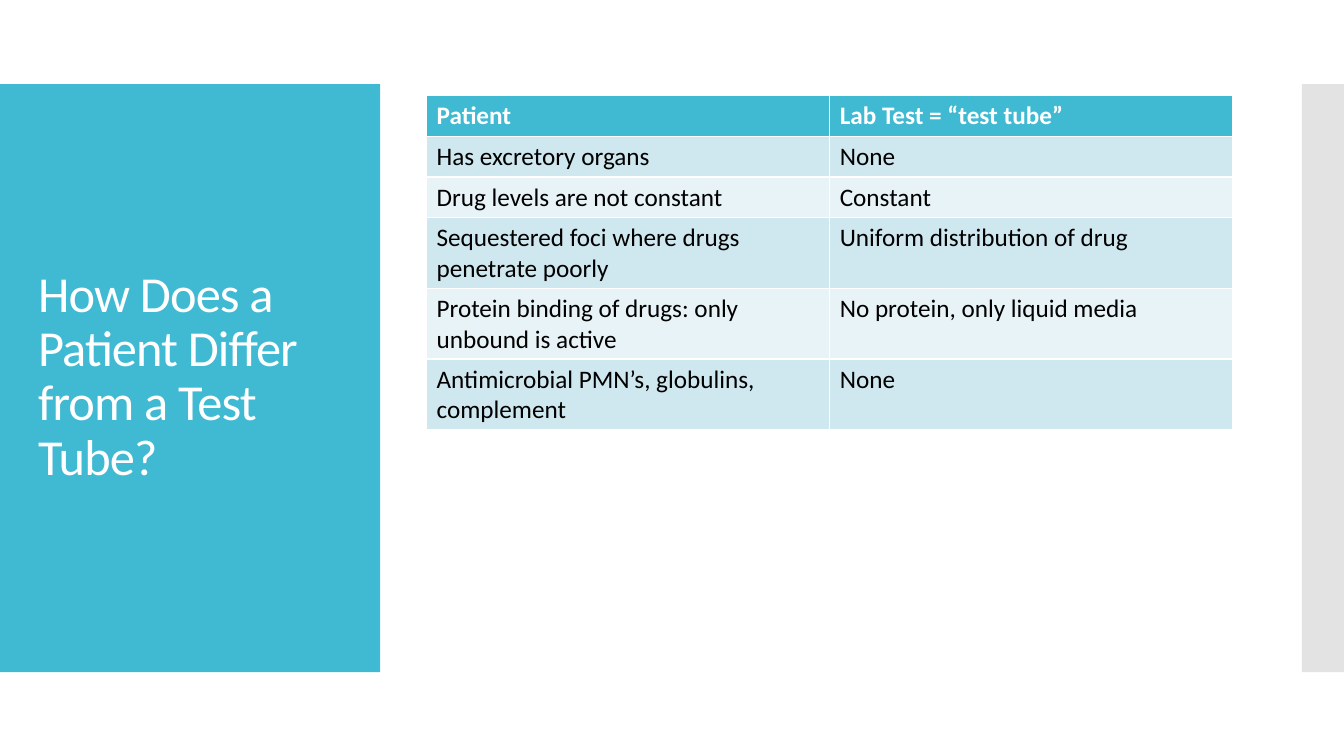
from lxml import etree
from pptx import Presentation
from pptx.dml.color import RGBColor
from pptx.enum.shapes import MSO_SHAPE
from pptx.enum.text import MSO_ANCHOR
from pptx.oxml.ns import qn
from pptx.util import Cm, Pt

RECTANGLE = MSO_SHAPE.RECTANGLE
MIDDLE = MSO_ANCHOR.MIDDLE

TITLE = "How Does a Patient Differ from a Test Tube?"
COMPARISON = [
    ("Patient", "Lab Test = “test tube”"),
    ("Has excretory organs", "None"),
    ("Drug levels are not constant", "Constant"),
    ("Sequestered foci where drugs penetrate poorly", "Uniform distribution of drug"),
    ("Protein binding of drugs: only unbound is active", "No protein, only liquid media"),
    ("Antimicrobial PMN’s, globulins, complement", "None"),
]
COLORS = {
    "teal": "40BAD2",
    "gray": "C8C8C8",
    "dark_band": "CFE7EE",
    "light_band": "E8F3F7",
    "white": "FFFFFF",
    "black": "000000",
}
FONT = "Calibri"
SLIDE_WIDTH, SLIDE_HEIGHT = 33.87, 19.05
PANEL_TOP, PANEL_HEIGHT = 2.12, 14.82
TITLE_PANEL_WIDTH, EDGE_PANEL_WIDTH = 9.58, 1.06
COLUMN_WIDTH, ROW_HEIGHT = 10.16, 1.03


def color(name):
    return RGBColor.from_string(COLORS[name])


def style_font(font, size, color_name, bold=False):
    font.name = FONT
    font.size = Pt(size)
    font.bold = bold
    font.color.rgb = color(color_name)


def add_panel(page, left, width, color_name):
    panel = page.shapes.add_shape(
        RECTANGLE, Cm(left), Cm(PANEL_TOP), Cm(width), Cm(PANEL_HEIGHT))
    panel.shadow.inherit = False
    panel.fill.solid()
    panel.fill.fore_color.rgb = color(color_name)
    panel.line.fill.background()
    return panel


def add_title(page):
    box = page.shapes.add_textbox(Cm(0.71), Cm(3.12), Cm(8.18), Cm(12.78))
    frame = box.text_frame
    frame.word_wrap = True
    frame.vertical_anchor = MIDDLE
    frame.text = TITLE
    para = frame.paragraphs[0]
    para.line_spacing = 0.9
    span = para.runs[0]
    style_font(span.font, 36, "white")
    span.font._element.set("spc", "-60")


def add_comparison(page):
    row_count, column_count = len(COMPARISON), len(COMPARISON[0])
    table = page.shapes.add_table(
        row_count, column_count, Cm(10.75), Cm(2.4),
        Cm(COLUMN_WIDTH * column_count), Cm(ROW_HEIGHT * row_count)).table
    for row_index, texts in enumerate(COMPARISON):
        header = row_index == 0
        band = "teal" if header else ("light_band", "dark_band")[row_index % 2]
        for column_index, text in enumerate(texts):
            cell = table.cell(row_index, column_index)
            cell.fill.solid()
            cell.fill.fore_color.rgb = color(band)
            cell.text_frame.text = text
            span = cell.text_frame.paragraphs[0].runs[0]
            style_font(span.font, 18, "white" if header else "black", header)


def main():
    deck = Presentation()
    deck.slide_width, deck.slide_height = Cm(SLIDE_WIDTH), Cm(SLIDE_HEIGHT)
    page = deck.slides.add_slide(deck.slide_layouts[6])
    add_panel(page, 0, TITLE_PANEL_WIDTH, "teal")
    edge = add_panel(page, SLIDE_WIDTH - EDGE_PANEL_WIDTH, EDGE_PANEL_WIDTH, "gray")
    edge_color = edge._element.spPr.find(qn("a:solidFill")).find(qn("a:srgbClr"))
    etree.SubElement(edge_color, qn("a:alpha"), val="50000")
    add_title(page)
    add_comparison(page)
    deck.save("out.pptx")


if __name__ == "__main__":
    main()
